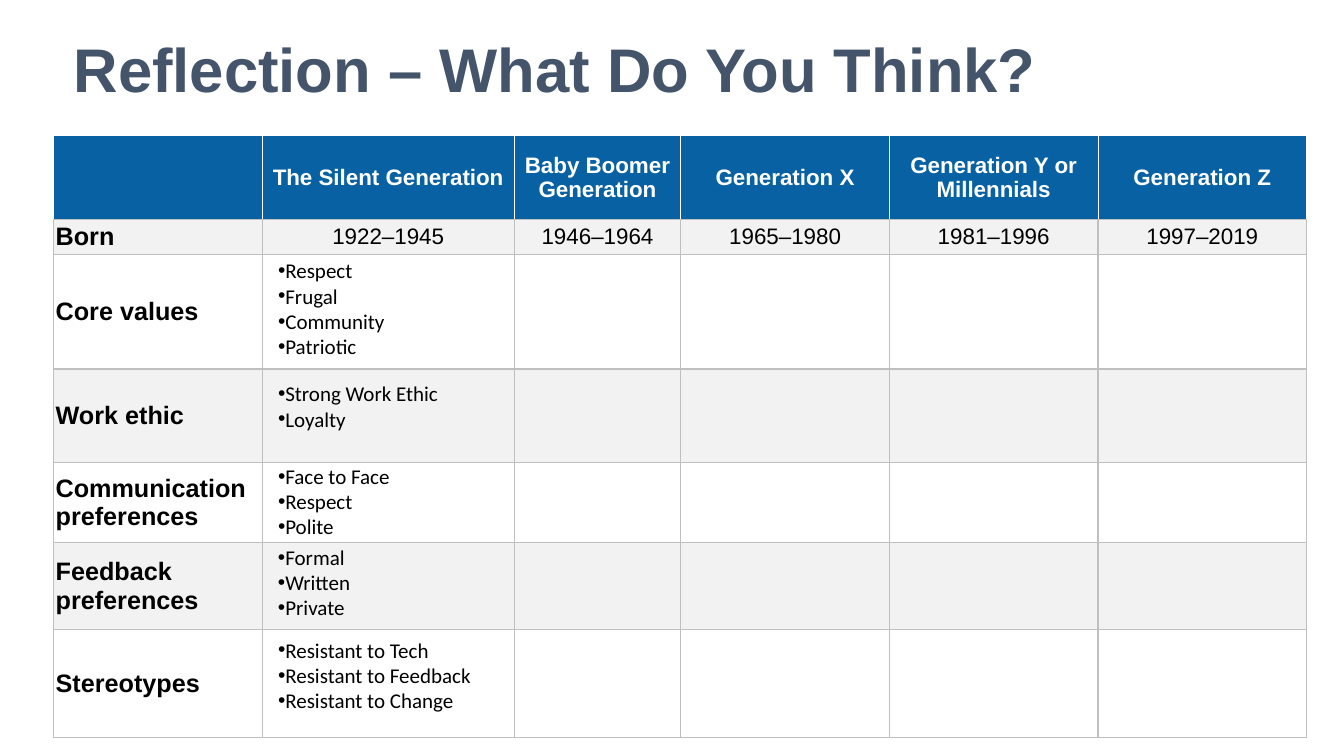
from dataclasses import dataclass
from typing import Any

from lxml.etree import SubElement
from pptx import Presentation
from pptx.dml.color import RGBColor
from pptx.enum.text import MSO_ANCHOR as Anchor, MSO_AUTO_SIZE as AutoSize, PP_ALIGN as Align
from pptx.oxml.ns import qn
from pptx.util import Pt

SLATE = RGBColor(0x44, 0x54, 0x6A)
BLUE = RGBColor(0x08, 0x61, 0xA2)
WHITE = RGBColor(0xFF, 0xFF, 0xFF)
BLACK = RGBColor(0, 0, 0)
BAND = RGBColor(0xF2, 0xF2, 0xF2)
GRID = RGBColor(0xBF, 0xBF, 0xBF)

TITLE_FONT = dict(name="Arial", size=Pt(44), bold=True, color=SLATE)
HEAD_FONT = dict(name="Arial", size=Pt(16), bold=True, color=WHITE)
LABEL_FONT = dict(name="Arial", size=Pt(18), bold=True, color=BLACK)
YEARS_FONT = dict(name="Arial", size=Pt(16), bold=False, color=BLACK)
LIST_FONT = dict(name="Calibri", size=Pt(15), bold=False, color=BLACK)

COL_WIDTHS = (149, 180, 119, 149, 149, 149)
ROW_HEIGHTS = (60, 24.6, 82, 67, 57, 62.4, 77)
ROWS = (
    ("", "The Silent Generation", "Baby Boomer Generation", "Generation X",
     "Generation Y or Millennials", "Generation Z"),
    ("Born", "1922–1945", "1946–1964", "1965–1980", "1981–1996", "1997–2019"),
    ("Core values",),
    ("Work ethic",),
    ("Communication preferences",),
    ("Feedback preferences",),
    ("Stereotypes",),
)


@dataclass
class Answers:
    top: float
    width: float
    height: float
    items: tuple[str, ...]


ANSWERS = (
    Answers(180.7, 170, 80, ("Respect", "Frugal", "Community", "Patriotic")),
    Answers(268.6, 181, 44, ("Strong Work Ethic", "Loyalty")),
    Answers(327.6, 425, 62, ("Face to Face", "Respect", "Polite")),
    Answers(385.2, 147, 62, ("Formal", "Written", "Private")),
    Answers(451.6, 193, 62,
            ("Resistant to Tech", "Resistant to Feedback", "Resistant to Change")),
)


def set_font(font: Any, style: dict[str, Any]) -> None:
    for key, value in style.items():
        if key == "color":
            font.color.rgb = value
        else:
            setattr(font, key, value)


def set_border(cell: Any, side: str, color: RGBColor, width: float) -> None:
    ln = SubElement(cell._tc.get_or_add_tcPr(), qn(f"a:ln{side}"), w=str(Pt(width)))
    fill = SubElement(ln, qn("a:solidFill"))
    SubElement(fill, qn("a:srgbClr"), val=str(color))


def format_cell(cell: Any, row: int, col: int, text: str) -> None:
    header = row == 0
    for side in "LRTB":
        white_edge = header and side != "B"
        set_border(cell, side, WHITE if white_edge else GRID, 0.6 if white_edge else 1)
    cell.fill.solid()
    cell.fill.fore_color.rgb = BLUE if header else BAND if row % 2 else WHITE
    cell.vertical_anchor = Anchor.MIDDLE
    for margin in ("left", "right", "top", "bottom"):
        setattr(cell, f"margin_{margin}", Pt(1.5))
    if text:
        p = cell.text_frame.paragraphs[0]
        p.alignment = Align.LEFT if col == 0 else Align.CENTER
        r = p.add_run()
        r.text = text
        set_font(r.font, HEAD_FONT if header else YEARS_FONT if col else LABEL_FONT)


def add_title(s: Any, text: str) -> None:
    sp = s.shapes.title
    sp.left, sp.top, sp.width, sp.height = Pt(45.4), Pt(15), Pt(830), Pt(73.4)
    tf = sp.text_frame
    tf.auto_size = AutoSize.NONE
    tf.vertical_anchor = Anchor.MIDDLE
    p = tf.paragraphs[0]
    p.alignment = Align.LEFT
    p.line_spacing = 0.9
    r = p.add_run()
    r.text = text
    set_font(r.font, TITLE_FONT)


def add_grid(s: Any) -> None:
    frame = s.shapes.add_table(len(ROWS), len(COL_WIDTHS), Pt(38.3), Pt(97),
                               Pt(sum(COL_WIDTHS)), Pt(sum(ROW_HEIGHTS)))
    table = frame.table
    for column, width in zip(table.columns, COL_WIDTHS):
        column.width = Pt(width)
    for i, (height, texts) in enumerate(zip(ROW_HEIGHTS, ROWS)):
        table.rows[i].height = Pt(height)
        for j in range(len(COL_WIDTHS)):
            format_cell(table.cell(i, j), i, j, texts[j] if j < len(texts) else "")


def add_answers(s: Any, answers: Answers) -> None:
    sp = s.shapes.add_textbox(Pt(191.5), Pt(answers.top), Pt(answers.width), Pt(answers.height))
    tf = sp.text_frame
    tf.word_wrap = True
    for i, item in enumerate(answers.items):
        p = tf.add_paragraph() if i else tf.paragraphs[0]
        pPr = p._p.get_or_add_pPr()
        SubElement(pPr, qn("a:buFont"), typeface="Arial")
        SubElement(pPr, qn("a:buChar"), char="•")
        r = p.add_run()
        r.text = item
        set_font(r.font, LIST_FONT)


def main() -> None:
    prs = Presentation()
    prs.slide_width, prs.slide_height = Pt(960), Pt(540)
    s = prs.slides.add_slide(prs.slide_layouts[5])

    # Title
    add_title(s, "Reflection – What Do You Think?")

    # Generations table
    add_grid(s)

    # Answers for the Silent Generation
    for answers in ANSWERS:
        add_answers(s, answers)

    prs.save("out.pptx")


if __name__ == "__main__":
    main()
